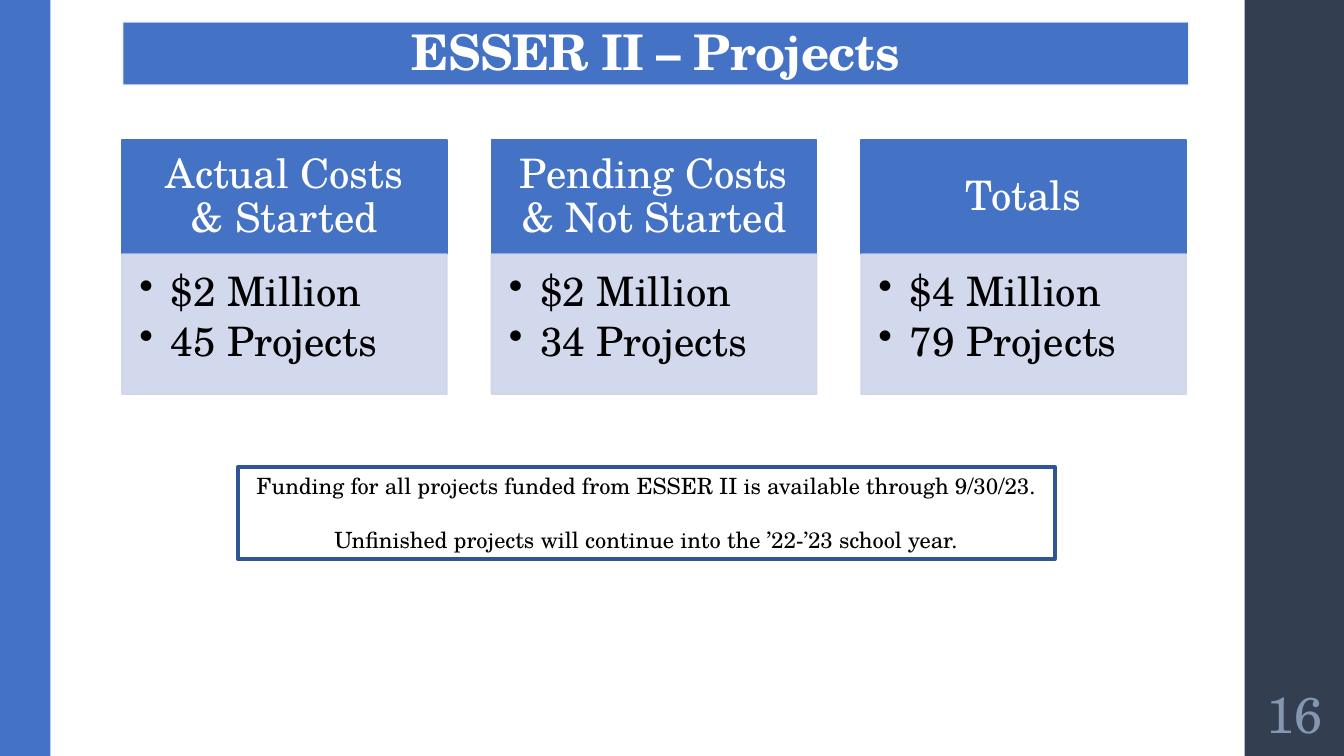
from lxml.etree import SubElement
from pptx import Presentation
from pptx.dml.color import RGBColor
from pptx.enum.shapes import MSO_SHAPE
from pptx.enum.text import MSO_ANCHOR, PP_ALIGN
from pptx.oxml.ns import qn
from pptx.util import Pt

COLORS = {
    "blue": "4472C4",
    "navy": "333F50",
    "pale": "CFD5EA",
    "border": "2F5597",
    "title_edge": "F9F9F9",
    "number": "8497B0",
    "white": "FFFFFF",
    "black": "000000",
}
SLIDE_WIDTH, SLIDE_HEIGHT = 960, 540
BAND_LEFT = 889
BAND_WIDTH = SLIDE_WIDTH - BAND_LEFT
CARD_LEFT, CARD_TOP, CARD_WIDTH, CARD_STEP = 87.1, 100.1, 232.2, 264
HEADER_HEIGHT, BODY_HEIGHT = 81.4, 100.1
CARDS = [
    ("Actual Costs & Started", ["$2 Million", "45 Projects"]),
    ("Pending Costs & Not Started", ["$2 Million", "34 Projects"]),
    ("Totals", ["$4 Million", "79 Projects"]),
]


class SlideBuilder:
    font_name = "TeX Gyre Schola"

    def __init__(self, slide):
        self.slide = slide

    def set_opacity(self, solid_fill, opacity):
        if opacity < 100:
            SubElement(solid_fill[0], qn("a:alpha"), val=str(opacity * 1000))

    def rectangle(self, left, top, width, height, fill=None, line=None,
                  line_width=1.1, fill_opacity=100, line_opacity=100):
        shape = self.slide.shapes.add_shape(
            MSO_SHAPE.RECTANGLE, Pt(left), Pt(top), Pt(width), Pt(height))
        shape.shadow.inherit = False
        properties = shape._element.spPr
        if fill:
            shape.fill.solid()
            shape.fill.fore_color.rgb = RGBColor.from_string(COLORS[fill])
            self.set_opacity(properties.find(qn("a:solidFill")), fill_opacity)
        else:
            shape.fill.background()
        if line:
            shape.line.width = Pt(line_width)
            shape.line.color.rgb = RGBColor.from_string(COLORS[line])
            outline = properties.find(qn("a:ln"))
            self.set_opacity(outline.find(qn("a:solidFill")), line_opacity)
        else:
            shape.line.fill.background()
        return shape

    def text_box(self, left, top, width, height):
        return self.slide.shapes.add_textbox(Pt(left), Pt(top), Pt(width), Pt(height))

    def add_text(self, shape, lines, size, color, anchor=MSO_ANCHOR.MIDDLE,
                 align=PP_ALIGN.CENTER, insets=(7.2, 3.6, 7.2, 3.6), spacing=1.0,
                 gap=0, bold=False, tracking=None, bullet_indent=None):
        frame = shape.text_frame
        frame.word_wrap = True
        frame.vertical_anchor = anchor
        (frame.margin_left, frame.margin_top,
         frame.margin_right, frame.margin_bottom) = map(Pt, insets)
        for index, line in enumerate(lines):
            paragraph = frame.add_paragraph() if index else frame.paragraphs[0]
            paragraph.alignment = align
            paragraph.line_spacing = spacing
            paragraph.space_after = Pt(gap)
            if bullet_indent:
                self.add_bullet(paragraph, bullet_indent)
            run = paragraph.add_run()
            run.text = line
            run.font.name = self.font_name
            run.font.size = Pt(size)
            run.font.bold = bold
            run.font.color.rgb = RGBColor.from_string(COLORS[color])
            if tracking:
                run._r.get_or_add_rPr().set("spc", str(round(tracking * 100)))

    def add_bullet(self, paragraph, indent):
        properties = paragraph._p.get_or_add_pPr()
        properties.set("marL", str(Pt(indent)))
        properties.set("indent", str(-Pt(indent)))
        SubElement(properties, qn("a:buChar"), char="•")

    def card(self, left, heading, items):
        header = self.rectangle(left, CARD_TOP, CARD_WIDTH, HEADER_HEIGHT, "blue", "blue")
        self.add_text(header, [heading], 29, "white", spacing=0.9,
                      insets=(16.2, 9.3, 16.2, 9.3))
        body = self.rectangle(left, CARD_TOP + HEADER_HEIGHT, CARD_WIDTH, BODY_HEIGHT,
                              "pale", "pale", fill_opacity=90, line_opacity=90)
        self.add_text(body, items, 29, "black", MSO_ANCHOR.TOP, PP_ALIGN.LEFT,
                      insets=(12.4, 12.4, 16.5, 18.6), spacing=0.9, gap=4.35,
                      bullet_indent=22.5)


def main():
    presentation = Presentation()
    presentation.slide_width = Pt(SLIDE_WIDTH)
    presentation.slide_height = Pt(SLIDE_HEIGHT)
    builder = SlideBuilder(presentation.slides.add_slide(presentation.slide_layouts[6]))

    builder.rectangle(BAND_LEFT, 0, BAND_WIDTH, SLIDE_HEIGHT, "navy")
    builder.rectangle(0, 0, 36, SLIDE_HEIGHT, "blue")

    title = builder.rectangle(87.4, 15.5, 762, 45.4, "blue", "title_edge", 1.35,
                              line_opacity=95)
    builder.add_text(title, ["ESSER II – Projects"], 35.1, "white", MSO_ANCHOR.BOTTOM,
                     spacing=0.85, bold=True, tracking=-0.5)

    for column, (heading, items) in enumerate(CARDS):
        builder.card(CARD_LEFT + column * CARD_STEP, heading, items)

    note = builder.rectangle(169.9, 333.7, 583.5, 65.5, line="border", line_width=3)
    builder.add_text(note, [
        "Funding for all projects funded from ESSER II is available through 9/30/23.",
        "Unfinished projects will continue into the ’22-’23 school year.",
    ], 16, "black", MSO_ANCHOR.TOP, gap=19.2)

    number = builder.text_box(BAND_LEFT, 486, BAND_WIDTH, 46.8)
    builder.add_text(number, ["16"], 36, "number", insets=(3.6, 3.6, 3.6, 3.6))

    presentation.save("out.pptx")


if __name__ == "__main__":
    main()
